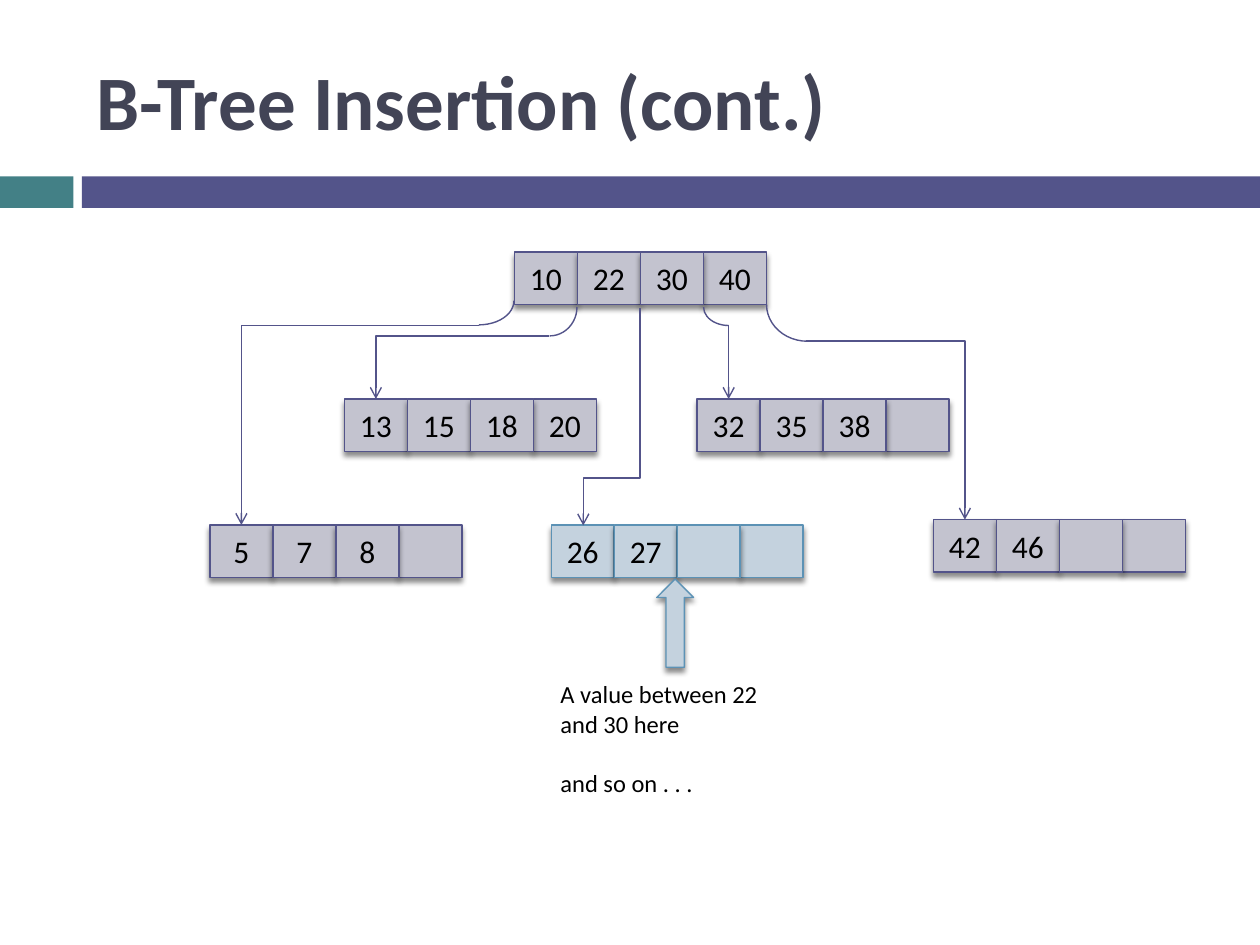
"""Build the B-tree insertion slide on a grid of 120 columns by 90 rows."""
import pptx
import pptx.dml.color
import pptx.enum.shapes
import pptx.enum.text
import pptx.oxml
import pptx.oxml.ns
import pptx.util

RGBColor = pptx.dml.color.RGBColor
KIND = pptx.enum.shapes.MSO_SHAPE
LINK = pptx.enum.shapes.MSO_CONNECTOR
ALIGN = pptx.enum.text.PP_ALIGN
ANCHOR = pptx.enum.text.MSO_ANCHOR
TEAL = RGBColor(0x43, 0x80, 0x86)
PURPLE = RGBColor(0x53, 0x54, 0x8A)
DARK = RGBColor(0x42, 0x44, 0x56)
GREY = RGBColor(0xC3, 0xC3, 0xCF)
PALE = RGBColor(0xC4, 0xD2, 0xDE)
BLUE = RGBColor(0x5C, 0x92, 0xB5)
BLACK = RGBColor(0, 0, 0)
SPACE = pptx.oxml.ns.nsdecls("a")
SHADE = (
    f'<a:effectLst {SPACE}><a:outerShdw blurRad="38100" dist="30480" dir="5400000" '
    'rotWithShape="0"><a:srgbClr val="000000"><a:alpha val="45000"/></a:srgbClr>'
    "</a:outerShdw></a:effectLst>"
)

deck = pptx.Presentation()
deck.slide_width = pptx.util.Inches(10)
deck.slide_height = pptx.util.Inches(7.5)
unit = deck.slide_width / 120
slide = deck.slides.add_slide(deck.slide_layouts[6])


def grid(*cells):
    return [round(cell * unit) for cell in cells]


def box(text="", *, at, kind=KIND.RECTANGLE, fill=None, line=None, turn=0, shade=False,
        size=18, color=BLACK, bold=False, align=ALIGN.CENTER, anchor=ANCHOR.MIDDLE):
    if kind is None:
        shape = slide.shapes.add_textbox(*grid(*at))
    else:
        shape = slide.shapes.add_shape(kind, *grid(*at))
        shape.shadow.inherit = False
    shape.rotation = turn
    if fill is None:
        shape.fill.background()
    else:
        shape.fill.solid()
        shape.fill.fore_color.rgb = fill
    if line is None:
        shape.line.fill.background()
    else:
        shape.line.color.rgb = line
        shape.line.width = pptx.util.Pt(0.79)
    if shade:
        props = shape._element.spPr
        props.remove(props.find(pptx.oxml.ns.qn("a:effectLst")))
        props.append(pptx.oxml.parse_xml(SHADE))
    if text:
        frame = shape.text_frame
        frame.word_wrap = True
        frame.vertical_anchor = anchor
        frame.text = text
        for part in frame.paragraphs:
            part.alignment = align
            part.font.name = "Calibri"
            part.font.size = pptx.util.Pt(size)
            part.font.bold = bold
            part.font.color.rgb = color
    return shape


box(at=(0, 16.8, 7, 3), fill=TEAL)
box(at=(7.8, 16.8, 112.2, 3), fill=PURPLE)
box("B-Tree Insertion (cont.)", at=(8, 3, 107, 13), kind=None, size=44, color=DARK,
    bold=True, align=ALIGN.LEFT)

nodes = [
    (49, 24, ["10", "22", "30", "40"], GREY, PURPLE),
    (32.8, 38, ["13", "15", "18", "20"], GREY, PURPLE),
    (66.4, 38, ["32", "35", "38", ""], GREY, PURPLE),
    (20, 50, ["5", "7", "8", ""], GREY, PURPLE),
    (52.5, 50, ["26", "27", "", ""], PALE, BLUE),
    (88.9, 49.5, ["42", "46", "", ""], GREY, PURPLE),
]
cells = {}
for left, top, keys, fill, line in nodes:
    for step in (0, 1, 3, 2):
        cells[left, step] = box(keys[step], at=(left + 6 * step, top, 6, 5), fill=fill,
                                line=line, shade=True)

for turn, at in [
    (180, (73, 25.5, 7.8, 7)),
    (180, (67, 27.5, 4.8, 3.5)),
    (90, (49.6, 26.65, 5.5, 5.2)),
    (90, (43.3, 25.3, 4.6, 6.7)),
]:
    box(at=at, kind=KIND.ARC, line=PURPLE, turn=turn)

for form, ends, turn in [
    ("bentConnector2", (76.8, 32.5, 91.9, 49.5), 0),
    ("line", (69.4, 31, 69.4, 38), 0),
    ("bentConnector2", (52.3, 32, 35.8, 38), 0),
    ("bentConnector2", (45.6, 31, 23, 50), 0),
    ("bentConnector3", (47.9, 37, 68.6, 42.4), 90),
]:
    kind = LINK.STRAIGHT if form == "line" else LINK.ELBOW
    link = slide.shapes.add_connector(kind, *grid(*ends))
    link.line.color.rgb = PURPLE
    link.line.width = pptx.util.Pt(0.79)
    props = link._element.spPr
    props.prstGeom.set("prst", form)
    if form == "line":
        link.end_connect(cells[66.4, 0], 0)
    if turn:
        props.xfrm.set("rot", str(turn * 60000))
        bend = props.prstGeom.get_or_add_avLst()
        bend.append(pptx.oxml.parse_xml(f'<a:gd {SPACE} name="adj1" fmla="val 78100"/>'))
    link.line._get_or_add_ln().append(
        pptx.oxml.parse_xml(f'<a:tailEnd {SPACE} type="arrow"/>'))
    props.append(pptx.oxml.parse_xml(f"<a:effectLst {SPACE}/>"))

box(at=(60.1, 57.6, 8.4, 3.5), kind=KIND.RIGHT_ARROW, fill=PALE, line=BLUE, turn=270,
    shade=True)
note = box("A value between 22 and 30 here\nand so on . . .", at=(52.2, 64.1, 25.2, 12.5),
           kind=None, size=14, align=ALIGN.LEFT, anchor=ANCHOR.TOP)
note.text_frame.paragraphs[1].space_before = pptx.util.Pt(17)

deck.save("out.pptx")
